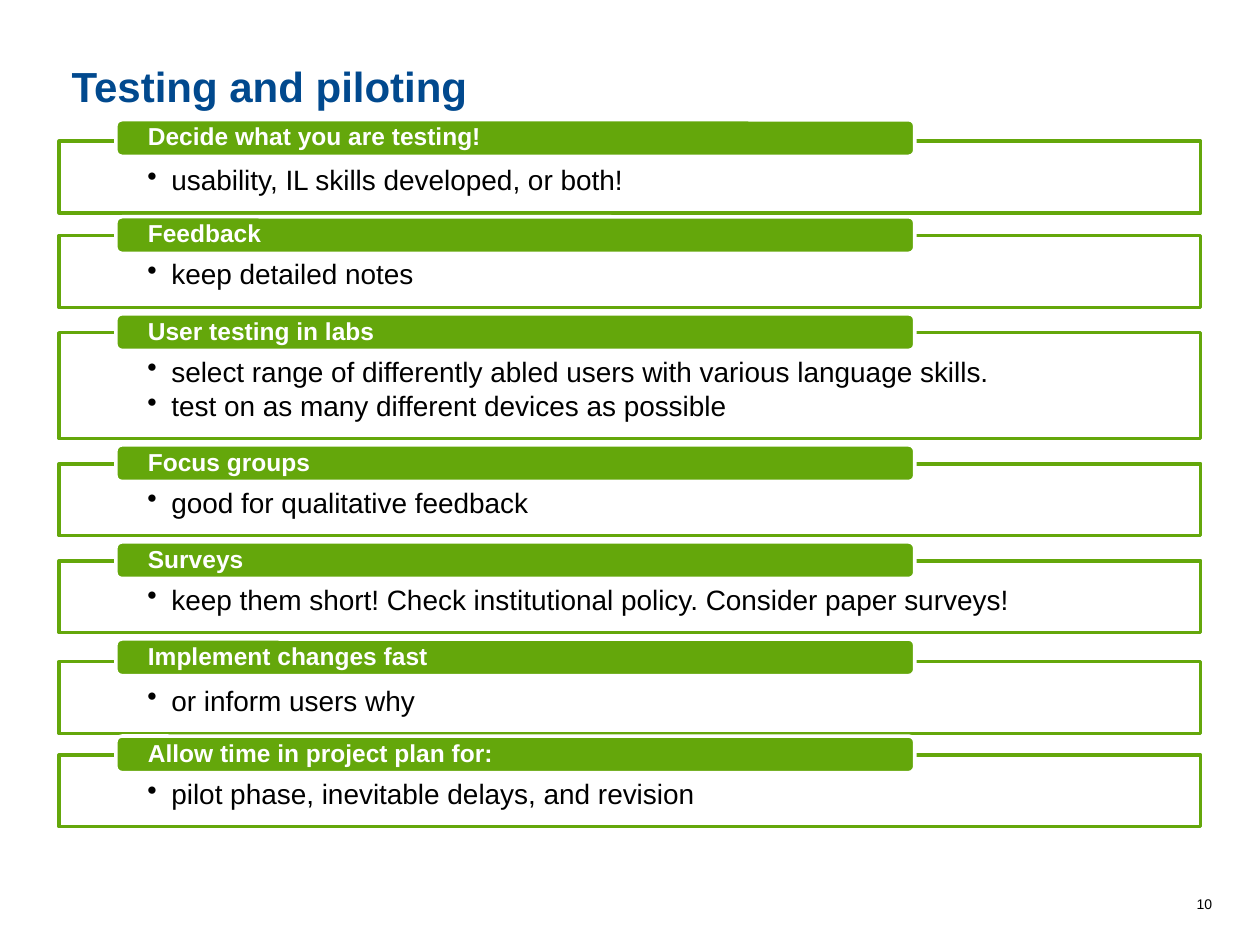
from dataclasses import dataclass

from lxml import etree
from pptx import Presentation
from pptx import util as u
from pptx.dml.color import RGBColor
from pptx.enum import shapes, text
from pptx.oxml.ns import qn


@dataclass(frozen=True)
class Theme:
    """Colours, font and type sizes of the slide."""
    font: str = "Arial"
    blue: str = "01498E"
    green: str = "64A70B"
    white: str = "FFFFFF"
    black: str = "000000"
    title: int = 24
    body: int = 16
    tab: int = 14
    number: int = 8


T = Theme()
WIDTH, HEIGHT = u.Inches(10), u.Inches(7.5)
LEFT, SPAN = 4.7, 90.6
TAB_LEFT, TAB_SPAN, TAB_HEIGHT = 9.2, 63.4, 3.87
TOP, STEP, LINE, BOX_HEIGHT, DROP = 12.67, 10.27, 3.6, 7.6, 2.0
SECTIONS = [
    ("Decide what you are testing!", ["usability, IL skills developed, or both!"], 2.27),
    ("Feedback", ["keep detailed notes"], DROP),
    ("User testing in labs",
     ["select range of differently abled users with various language skills.",
      "test on as many different devices as possible"], DROP),
    ("Focus groups", ["good for qualitative feedback"], DROP),
    ("Surveys", ["keep them short! Check institutional policy. Consider paper surveys!"], DROP),
    ("Implement changes fast", ["or inform users why"], 2.4),
    ("Allow time in project plan for:", ["pilot phase, inevitable delays, and revision"], DROP),
]


def place(x, y, w, h):
    """Turn percentages of the slide into a position and size."""
    return [int(n * side / 100) for n, side in zip((x, y, w, h), (WIDTH, HEIGHT) * 2)]


def add_bullet(p):
    """Give a paragraph a hanging bullet."""
    pPr = p._p.get_or_add_pPr()
    pPr.set("marL", str(u.Inches(0.19)))
    pPr.set("indent", str(-u.Inches(0.19)))
    etree.SubElement(pPr, qn("a:buChar")).set("char", "•")


def write(sp, lines, size, color, bold=False, align=text.PP_ALIGN.LEFT,
          anchor=text.MSO_ANCHOR.TOP, insets=(0.1, 0.05, 0.1, 0.05),
          spacing=None, after=0, bullet=False):
    """Write lines of formatted text into a shape."""
    tf = sp.text_frame
    tf.word_wrap = True
    tf.vertical_anchor = anchor
    tf.margin_left, tf.margin_top, tf.margin_right, tf.margin_bottom = map(u.Inches, insets)
    for i, line in enumerate(lines):
        p = tf.paragraphs[0] if i == 0 else tf.add_paragraph()
        if bullet:
            add_bullet(p)
        p.alignment = align
        p.line_spacing = spacing
        p.space_after = u.Pt(after)
        r = p.add_run()
        r.text = line
        r.font.name, r.font.size, r.font.bold = T.font, u.Pt(size), bold
        r.font.color.rgb = RGBColor.from_string(color)


def add_label(s, at, line, size, color, **fmt):
    """Add a text box with one line."""
    write(s.shapes.add_textbox(*place(*at)), [line], size, color, **fmt)


def add_panel(s, kind, at, fill, line, opacity=100):
    """Add a filled and outlined shape."""
    sp = s.shapes.add_shape(kind, *place(*at))
    sp.shadow.inherit = False
    sp.fill.solid()
    sp.fill.fore_color.rgb = RGBColor.from_string(fill)
    if opacity < 100:
        clr = sp._element.spPr.find(".//" + qn("a:srgbClr"))
        etree.SubElement(clr, qn("a:alpha")).set("val", str(opacity * 1000))
    sp.line.color.rgb = RGBColor.from_string(line)
    sp.line.width = u.Pt(2)
    return sp


def add_section(s, y, heading, points, drop):
    """Add a bulleted box with a heading tab on its top edge."""
    height = BOX_HEIGHT + LINE * (len(points) - 1)
    box = add_panel(s, shapes.MSO_SHAPE.RECTANGLE, (LEFT, y + drop, SPAN, height),
                    T.white, T.green, opacity=90)
    write(box, points, T.body, T.black, insets=(0.7, 0.2, 0.7, 0.12),
          spacing=0.9, after=2.4, bullet=True)
    tab = add_panel(s, shapes.MSO_SHAPE.ROUNDED_RECTANGLE,
                    (TAB_LEFT, y, TAB_SPAN, TAB_HEIGHT), T.green, T.white)
    write(tab, [heading], T.tab, T.white, bold=True, anchor=text.MSO_ANCHOR.MIDDLE,
          insets=(0.24, 0, 0.24, 0), spacing=0.9)


def main():
    """Build and save the slide."""
    prs = Presentation()
    prs.slide_width, prs.slide_height = WIDTH, HEIGHT
    s = prs.slides.add_slide(prs.slide_layouts[6])
    add_label(s, (53.9, 94.13, 43.3, 3.2), "10", T.number, T.black,
              align=text.PP_ALIGN.RIGHT)
    add_label(s, (LEFT, 5.33, SPAN, 6.67), "Testing and piloting", T.title, T.blue,
              bold=True, insets=(0.1, 0.08, 0.1, 0.03))
    y = TOP
    for heading, points, drop in SECTIONS:
        add_section(s, y, heading, points, drop)
        y += STEP + LINE * (len(points) - 1)
    prs.save("out.pptx")


if __name__ == "__main__":
    main()
